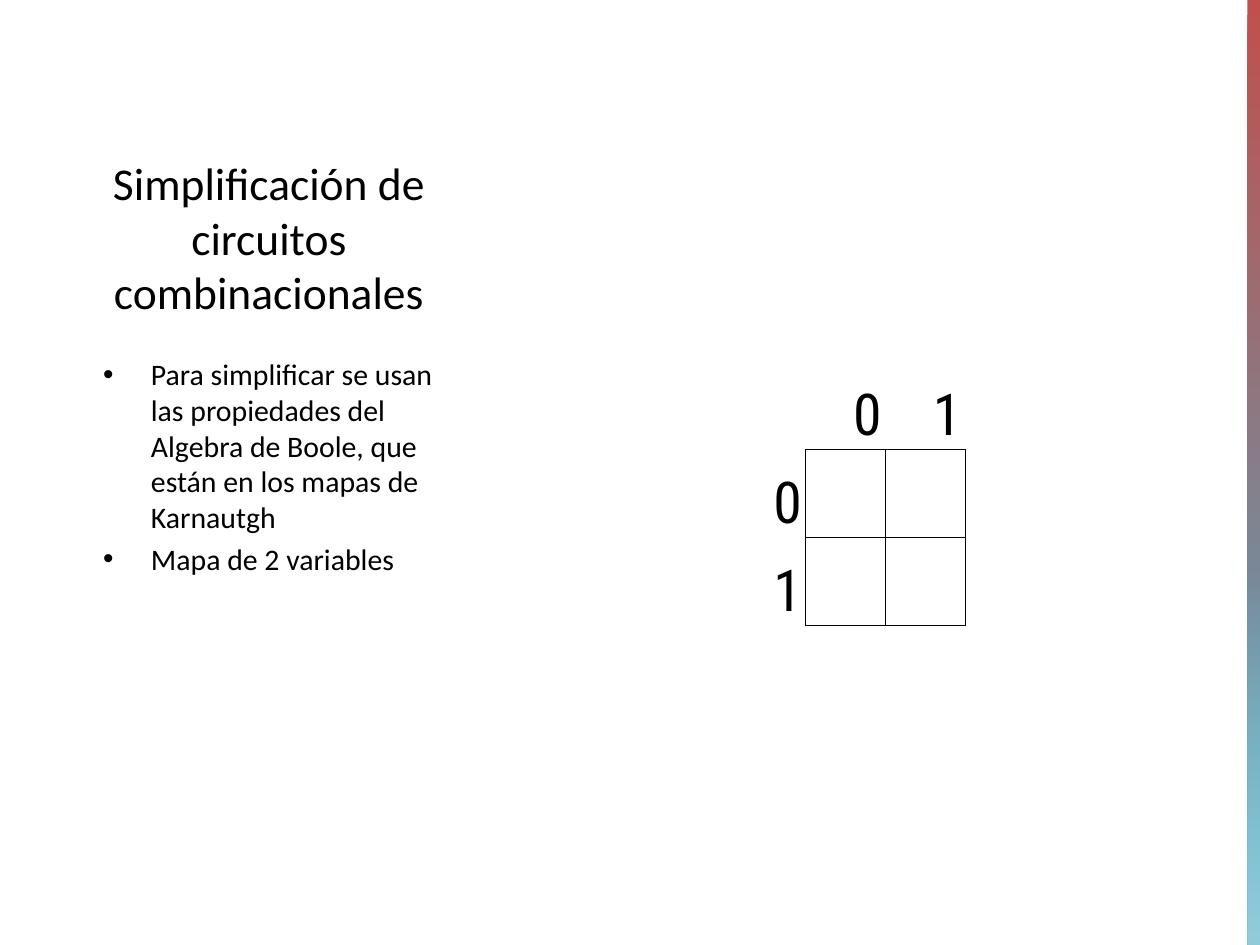
from dataclasses import dataclass

from lxml.etree import SubElement as Sub
from pptx import Presentation
from pptx.dml.color import RGBColor as RGB
from pptx.enum.shapes import MSO_SHAPE as Kind
from pptx.enum.text import MSO_ANCHOR as Anchor, PP_ALIGN as Align
from pptx.oxml.ns import qn
from pptx.util import Emu, Inches, Pt

WIDE, HIGH = 10, 7.5


@dataclass(frozen=True)
class Theme:
    ink: str = "000000"
    red: str = "C0504D"
    teal: str = "4BACC6"
    sky: str = "93CDDD"
    face: str = "Calibri"
    label: str = "Roboto Condensed"
    head: int = 26
    body: int = 17
    mark: int = 33
    rule: float = 0.5
    plain: str = "{2D5ABB26-0587-4C30-8999-92F81FD0307C}"


@dataclass(frozen=True)
class Box:
    left: float
    top: float
    wide: float
    high: float

    def place(self) -> tuple:
        return (Inches(self.left * WIDE), Inches(self.top * HIGH),
                Inches(self.wide * WIDE), Inches(self.high * HIGH))


@dataclass(frozen=True)
class Stop:
    at: int
    color: str
    alpha: int = 100


@dataclass(frozen=True)
class Band:
    box: Box
    stops: tuple


THEME = Theme()
TITLE = "Simplificación de circuitos combinacionales"
POINTS = (
    "Para simplificar se usan las propiedades del Algebra de Boole, "
    "que están en los mapas de Karnautgh",
    "Mapa de 2 variables",
)
HEAD = Box(0.072, 0.108, 0.283, 0.236)
BODY = Box(0.072, 0.37, 0.283, 0.503)
MAP = Box(0.576, 0.361, 0.19, 0.301)
ROWS = (0.86, 0.7, 0.7)
GRID = (("", "0", "1"), ("0", "", ""), ("1", "", ""))
BANDS = (
    Band(Box(0.99, 0, 0.01, 1), (Stop(0, THEME.red), Stop(100, THEME.teal))),
    Band(Box(0.99, 0.515, 0.01, 0.485),
         (Stop(19, THEME.sky, 0), Stop(100, THEME.sky))),
)


def style(para, face: str, size: int, align) -> None:
    para.alignment = align
    for name, value in {"name": face, "size": Pt(size)}.items():
        setattr(para.font, name, value)
    para.font.color.rgb = RGB.from_string(THEME.ink)


def add_text(slide, box: Box, anchor):
    frame = slide.shapes.add_textbox(*box.place()).text_frame
    for name, value in {"word_wrap": True, "vertical_anchor": anchor}.items():
        setattr(frame, name, value)
    return frame


def add_title(slide) -> None:
    para = add_text(slide, HEAD, Anchor.BOTTOM).paragraphs[0]
    para.text = TITLE
    style(para, THEME.face, THEME.head, Align.CENTER)


def add_points(slide) -> None:
    frame = add_text(slide, BODY, Anchor.TOP)
    for i, text in enumerate(POINTS):
        para = frame.add_paragraph() if i else frame.paragraphs[0]
        para.text = text
        props = para._p.get_or_add_pPr()
        props.set("marL", str(Inches(0.38)))
        props.set("indent", str(-Inches(0.38)))
        Sub(props, qn("a:buFont"), typeface="Arial")
        Sub(props, qn("a:buChar"), char="•")
        style(para, THEME.face, THEME.body, Align.LEFT)
        if i:
            para.space_before = Pt(0.2 * THEME.body)


def add_band(slide, band: Band) -> None:
    shape = slide.shapes.add_shape(Kind.RECTANGLE, *band.box.place())
    shape.shadow.inherit = False
    shape.line.fill.background()
    shape.fill.gradient()
    shape.fill.gradient_angle = 270
    stops = shape._element.spPr.find(qn("a:gradFill")).find(qn("a:gsLst"))
    for old in list(stops):
        stops.remove(old)
    for stop in band.stops:
        node = Sub(stops, qn("a:gs"), pos=str(stop.at * 1000))
        color = Sub(node, qn("a:srgbClr"), val=stop.color)
        if stop.alpha < 100:
            Sub(color, qn("a:alpha"), val=str(stop.alpha * 1000))


def add_edges(cell, row: int, col: int) -> None:
    props = cell._tc.get_or_add_tcPr()
    inner = row > 0 and col > 0
    edges = {"L": inner, "R": row > 0, "T": inner, "B": col > 0}
    for side, drawn in edges.items():
        line = Sub(props, qn(f"a:ln{side}"), w=str(Pt(THEME.rule)))
        if drawn:
            fill = Sub(line, qn("a:solidFill"))
            Sub(fill, qn("a:srgbClr"), val=THEME.ink)
        else:
            Sub(line, qn("a:noFill"))


def add_map(slide) -> None:
    left, top, wide, _ = MAP.place()
    size = len(GRID)
    table = slide.shapes.add_table(
        size, size, left, top, wide, Inches(sum(ROWS))).table
    for name in ("first_row", "horz_banding"):
        setattr(table, name, False)
    table._tbl.tblPr.find(qn("a:tableStyleId")).text = THEME.plain
    form = {
        "vertical_anchor": Anchor.BOTTOM,
        "margin_left": Inches(0.03),
        "margin_right": Inches(0.03),
        "margin_top": Inches(0.03),
        "margin_bottom": 0,
    }
    for r, texts in enumerate(GRID):
        table.rows[r].height = Inches(ROWS[r])
        table.columns[r].width = Emu(wide // size)
        for c, text in enumerate(texts):
            cell = table.cell(r, c)
            add_edges(cell, r, c)
            cell.fill.background()
            if text:
                for name, value in form.items():
                    setattr(cell, name, value)
                cell.text = text
                style(cell.text_frame.paragraphs[0],
                      THEME.label, THEME.mark, Align.RIGHT)


def main() -> None:
    deck = Presentation()
    deck.slide_width, deck.slide_height = Inches(WIDE), Inches(HIGH)
    slide = deck.slides.add_slide(deck.slide_layouts[6])
    add_title(slide)
    add_points(slide)
    for band in BANDS:
        add_band(slide, band)
    add_map(slide)
    deck.save("out.pptx")


if __name__ == "__main__":
    main()
